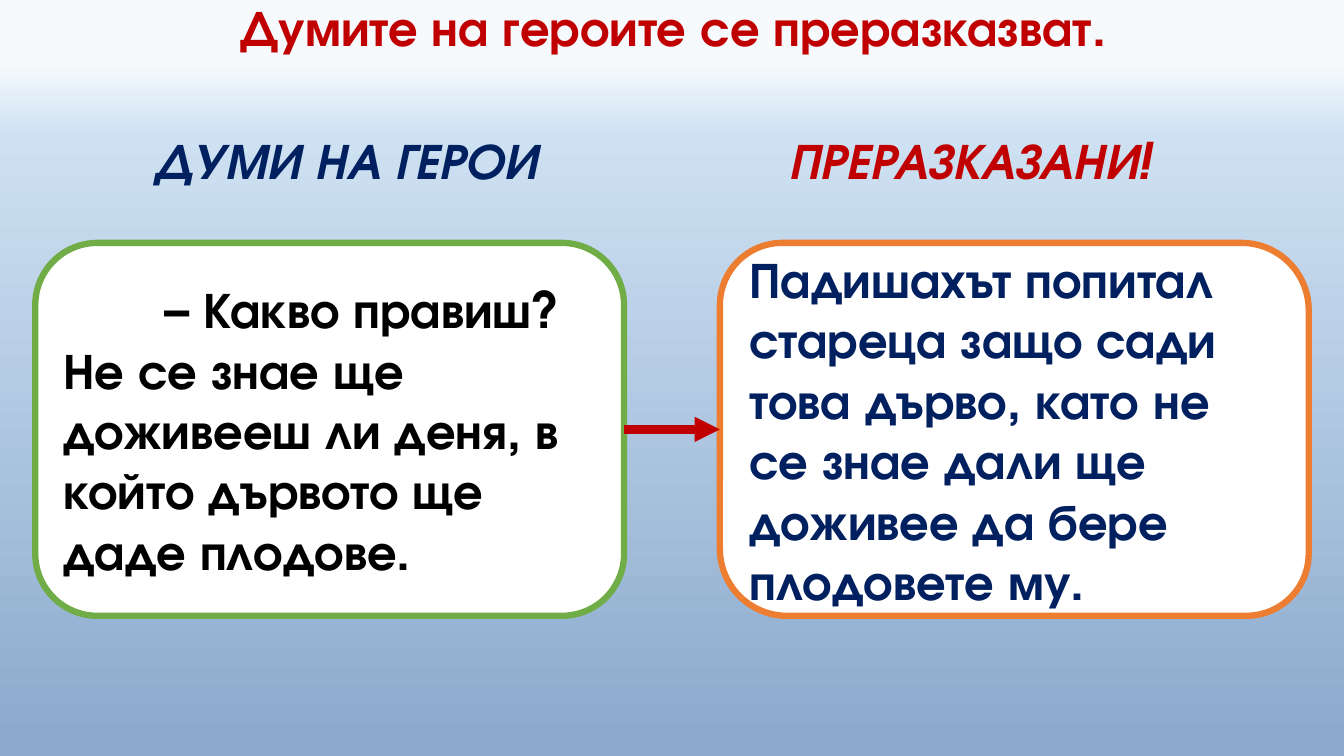
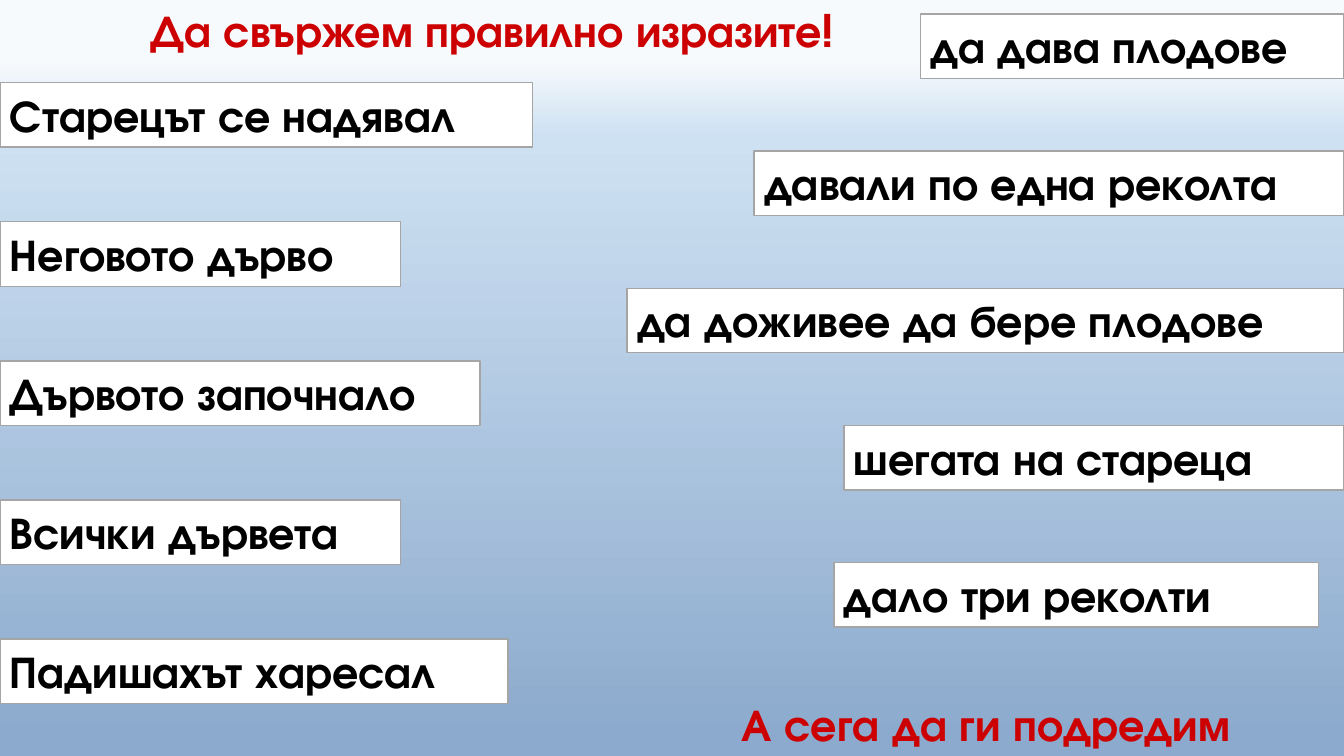
from copy import deepcopy

from pptx import Presentation
from pptx.dml.color import RGBColor
from pptx.enum.shapes import MSO_CONNECTOR, MSO_SHAPE
from pptx.enum.text import MSO_ANCHOR, MSO_AUTO_SIZE, PP_ALIGN
from pptx.oxml.ns import qn
from pptx.oxml.xmlchemy import OxmlElement
from pptx.util import Inches, Pt

RECT, ROUND = MSO_SHAPE.RECTANGLE, MSO_SHAPE.ROUNDED_RECTANGLE
DIAGONAL = MSO_SHAPE.ROUND_2_DIAG_RECTANGLE
STRAIGHT = MSO_CONNECTOR.STRAIGHT
TOP, MIDDLE = MSO_ANCHOR.TOP, MSO_ANCHOR.MIDDLE
LEFT, CENTER = PP_ALIGN.LEFT, PP_ALIGN.CENTER
NO_FIT = MSO_AUTO_SIZE.NONE

FONT = "TeX Gyre Adventor"
BLACK = RGBColor(0x00, 0x00, 0x00)
WHITE = RGBColor(0xFF, 0xFF, 0xFF)
NAVY = RGBColor(0x00, 0x20, 0x60)
DARK_RED = RGBColor(0xC0, 0x00, 0x00)
RED = RGBColor(0xCC, 0x00, 0x00)
GREEN = RGBColor(0x70, 0xAD, 0x47)
ORANGE = RGBColor(0xED, 0x7D, 0x31)
GRAY = RGBColor(0xA5, 0xA5, 0xA5)
SKY = [(0.08, RGBColor(0xF7, 0xFA, 0xFD)),
       (0.18, RGBColor(0xCE, 0xE1, 0xF2)),
       (0.98, RGBColor(0x8C, 0xAA, 0xCD))]

WIDTH, HEIGHT = 13.33, 7.5
TITLE_ONLY = 5
LABEL_HEIGHT = 0.64
PHRASES_LEFT = [("Старецът се надявал", 5.28), ("Неговото дърво", 3.97),
                ("Дървото започнало", 4.76), ("Всички дървета", 3.97),
                ("Падишахът харесал", 5.04)]
PHRASES_RIGHT = [("да дава плодове", 4.2, 0), ("давали по една реколта", 5.85, 0),
                 ("да доживее да бере плодове", 7.11, 0),
                 ("шегата на стареца", 4.96, 0), ("дало три реколти", 4.81, 0.25)]


def write(shape, text, size=32, color=BLACK, italic=False, align=LEFT,
          anchor=TOP, wrap=True, indent=0):
    """Fill a shape with one formatted paragraph."""
    tf = shape.text_frame
    tf.auto_size, tf.word_wrap, tf.vertical_anchor = NO_FIT, wrap, anchor
    p = tf.paragraphs[0]
    p.alignment = align
    if indent:
        p._p.get_or_add_pPr().set("indent", str(Inches(indent)))
    r = p.add_run()
    r.text = text
    r.font.name, r.font.size, r.font.color.rgb = FONT, Pt(size), color
    r.font.bold, r.font.italic = True, italic


def add_text(s, box, text, **style):
    """Add an unwrapped text box."""
    write(s.shapes.add_textbox(*map(Inches, box)), text, wrap=False, **style)


def add_panel(s, box, text, kind=RECT, line=GRAY, weight=1, **style):
    """Add a white outlined shape with text."""
    sp = s.shapes.add_shape(kind, *map(Inches, box))
    sp.shadow.inherit = False
    sp.fill.solid()
    sp.fill.fore_color.rgb = WHITE
    sp.line.color.rgb, sp.line.width = line, Pt(weight)
    write(sp, text, **style)
    return sp


def add_arrow(s, x1, x2, y):
    """Add a thick horizontal arrow."""
    line = s.shapes.add_connector(STRAIGHT, *map(Inches, (x1, y, x2, y)))
    line.line.color.rgb, line.line.width = DARK_RED, Pt(6)
    tail = OxmlElement("a:tailEnd")
    tail.set("type", "triangle")
    line.line._get_or_add_ln().append(tail)
    line._element.spPr.append(OxmlElement("a:effectLst"))


def set_background(master):
    """Give the master a vertical three-stop gradient."""
    fill = master.background.fill
    fill.gradient()
    fill.gradient_angle = 270
    stops = master._element.find(".//" + qn("a:gsLst"))
    stops.append(deepcopy(stops[-1]))
    for stop, (position, color) in zip(fill.gradient_stops, SKY):
        stop.position, stop.color.rgb = position, color


def add_slide(prs, title, box, **style):
    """Add a slide with a placed and formatted title."""
    s = prs.slides.add_slide(prs.slide_layouts[TITLE_ONLY])
    sp = s.shapes.title
    sp.left, sp.top, sp.width, sp.height = map(Inches, box)
    write(sp, title, align=CENTER, wrap=False, **style)
    return s


def speech_pair(s, box):
    """Place the direct and the retold speech side by side with an arrow."""
    x, y, w, h = box
    panel_w, head_y = 5.84, y - 1.18
    right_x = x + w - panel_w
    big = {"size": 36, "anchor": MIDDLE}
    add_text(s, (x + 1.08, head_y, 4.28, 0.71), "ДУМИ НА ГЕРОИ",
             size=36, color=NAVY, italic=True)
    add_text(s, (right_x + 0.58, head_y, 4.15, 0.71), "ПРЕРАЗКАЗАНИ!",
             size=36, color=DARK_RED, italic=True)
    add_panel(s, (x, y, panel_w, h),
              "– Какво правиш? Не се знае ще доживееш ли деня, "
              "в който дървото ще даде плодове.",
              kind=ROUND, line=GREEN, weight=4.5, indent=1, **big)
    retold = add_panel(s, (right_x, y, panel_w, h),
                       "Падишахът попитал стареца защо сади това дърво, като "
                       "не се знае дали ще доживее да бере плодовете му.",
                       kind=DIAGONAL, line=ORANGE, weight=4.5, color=NAVY, **big)
    retold.adjustments[0], retold.adjustments[1] = 0.167, 0.18
    add_arrow(s, x + panel_w, right_x, y + h / 2)


def phrase_columns(s, box):
    """Place the phrases to match along both sides of a box."""
    x, y, w, h = box
    for i, (text, width) in enumerate(PHRASES_LEFT):
        add_panel(s, (x, y + 0.68 + 1.38 * i, width, LABEL_HEIGHT), text)
    for i, (text, width, gap) in enumerate(PHRASES_RIGHT):
        left = x + w - width - gap
        add_panel(s, (left, y + 1.36 * i, width, LABEL_HEIGHT), text)
    add_text(s, (x + 7.04, y + h - LABEL_HEIGHT, 5.48, LABEL_HEIGHT),
             "А сега да ги подредим", color=RED, align=CENTER)


def main():
    """Build and save the presentation."""
    prs = Presentation()
    prs.slide_width, prs.slide_height = Inches(WIDTH), Inches(HEIGHT)
    set_background(prs.slide_master)
    s = add_slide(prs, "Думите на героите се преразказват.",
                  (1.78, -0.09, 9.8, 0.71), size=36, color=DARK_RED)
    speech_pair(s, (0.35, 2.41, 12.63, 3.7))
    s = add_slide(prs, "Да свържем правилно изразите!",
                  (1.05, -0.02, 7.67, LABEL_HEIGHT), color=RED)
    phrase_columns(s, (0, 0.14, WIDTH, HEIGHT - 0.14))
    prs.save("out.pptx")


if __name__ == "__main__":
    main()
